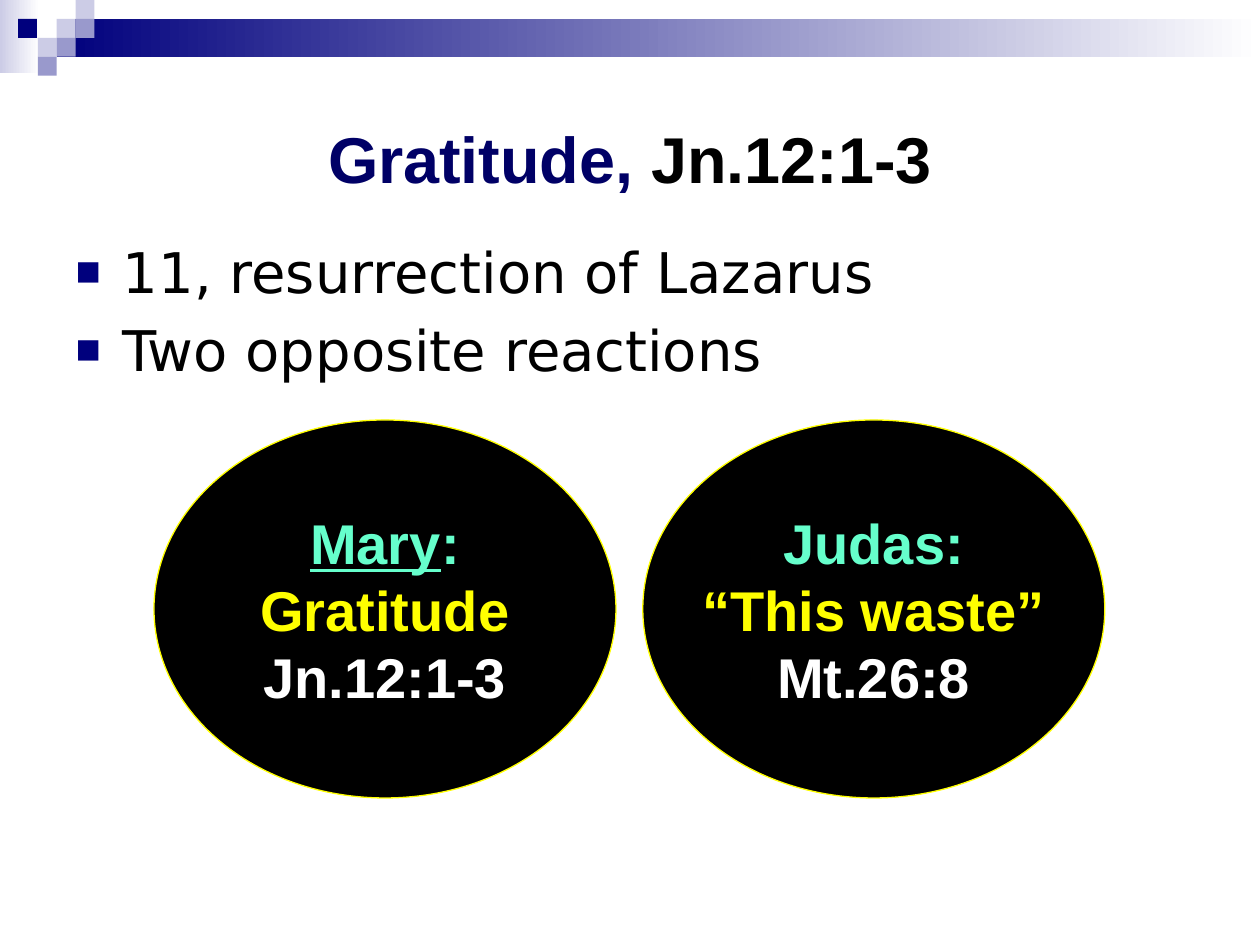
from lxml.etree import SubElement
from pptx import Presentation
from pptx.dml.color import RGBColor
from pptx.enum.shapes import MSO_SHAPE as Shape
from pptx.enum.text import MSO_ANCHOR as Anchor, MSO_AUTO_SIZE as AutoSize, PP_ALIGN as Align
from pptx.oxml.ns import qn
from pptx.util import Pt

COLORS = {
    "navy": "00007D", "title": "000066", "lavender": "CCCCE6", "violet": "9999CC",
    "white": "FFFFFF", "black": "000000", "yellow": "FFFF00", "mint": "66FFCC",
}
TILE = 10.8


def color(name):
    return RGBColor.from_string(COLORS[name])


def place(shape, left, top, width, height):
    shape.left, shape.top, shape.width, shape.height = map(Pt, (left, top, width, height))


def add_filled(slide, kind, box, fill):
    shape = slide.shapes.add_shape(kind, *map(Pt, box))
    shape.shadow.inherit = False
    shape.line.fill.background()
    shape.fill.solid()
    shape.fill.fore_color.rgb = color(fill)
    return shape


def add_fade(slide, box, start):
    fill = add_filled(slide, Shape.RECTANGLE, box, start).fill
    fill.gradient()
    fill.gradient_angle = 0
    for stop, position, name in zip(fill.gradient_stops, (0, 1), (start, "white")):
        stop.position = position
        stop.color.rgb = color(name)


def add_runs(paragraph, runs):
    for text, name in runs:
        run = paragraph.add_run()
        run.text = text
        run.font.color.rgb = color(name)


def set_font(paragraph, name, size, bold=False):
    paragraph.font.name = name
    paragraph.font.size = Pt(size)
    paragraph.font.bold = bold


def add_bullet(paragraph):
    props = paragraph._p.get_or_add_pPr()
    props.set("marL", str(Pt(27)))
    props.set("indent", str(Pt(-27)))
    SubElement(SubElement(props, qn("a:buClr")), qn("a:srgbClr"), val=COLORS["navy"])
    SubElement(props, qn("a:buSzPct"), val="75000")
    SubElement(props, qn("a:buFont"), typeface="Arial")
    SubElement(props, qn("a:buChar"), char="■")


def add_banner(slide):
    add_fade(slide, (0, 0, 22.5, 41.8), "lavender")
    add_fade(slide, (32.4, TILE, 687.6, 21.6), "navy")
    # Tiles: left, row and colour
    for left, row, fill in (
        (32.4, 1, "lavender"), (43.2, 0, "lavender"), (43.2, 1, "violet"),
        (21.6, 2, "lavender"), (10.3, 1, "navy"), (32.4, 2, "violet"), (21.6, 3, "violet"),
    ):
        add_filled(slide, Shape.RECTANGLE, (left, row * TILE, TILE, TILE), fill)


def fill_title(title):
    place(title, 36, 36, 648, 108)
    frame = title.text_frame
    frame.auto_size = AutoSize.NONE
    frame.vertical_anchor = Anchor.MIDDLE
    heading = frame.paragraphs[0]
    heading.alignment = Align.CENTER
    set_font(heading, "Arial", 37, bold=True)
    add_runs(heading, [("Gratitude,", "title"), (" Jn.12:1-3", "black")])


def fill_body(body, points):
    place(body, 36, 132, 648, 336)
    frame = body.text_frame
    frame.auto_size = AutoSize.NONE
    for index, text in enumerate(points):
        point = frame.add_paragraph() if index else frame.paragraphs[0]
        add_bullet(point)
        set_font(point, "DejaVu Sans", 32)
        add_runs(point, [(text, "black")])


def add_reaction(slide, left, lines):
    oval = add_filled(slide, Shape.OVAL, (left, 240, 264, 216), "black")
    oval.line.color.rgb = color("yellow")
    oval.line.width = Pt(0.75)
    frame = oval.text_frame
    frame.word_wrap = False
    frame.vertical_anchor = Anchor.MIDDLE
    for index, runs in enumerate(lines):
        line = frame.add_paragraph() if index else frame.paragraphs[0]
        line.alignment = Align.CENTER
        set_font(line, "Arial", 32, bold=True)
        add_runs(line, runs)
    return frame


def main():
    deck = Presentation()
    deck.slide_width, deck.slide_height = Pt(720), Pt(540)
    slide = deck.slides.add_slide(deck.slide_layouts[1])

    # Banner, title and points
    add_banner(slide)
    fill_title(slide.shapes.title)
    fill_body(slide.placeholders[1], ["11, resurrection of Lazarus", "Two opposite reactions"])

    # The two reactions
    mary = add_reaction(slide, 88, [
        [("Mary", "mint"), (":", "mint")], [("Gratitude", "yellow")], [("Jn.12:1-3", "white")]])
    mary.paragraphs[0].runs[0].font.underline = True
    add_reaction(slide, 367.3, [
        [("Judas:", "mint")], [("“This waste”", "yellow")], [("Mt.26:8", "white")]])

    deck.save("out.pptx")


if __name__ == "__main__":
    main()
